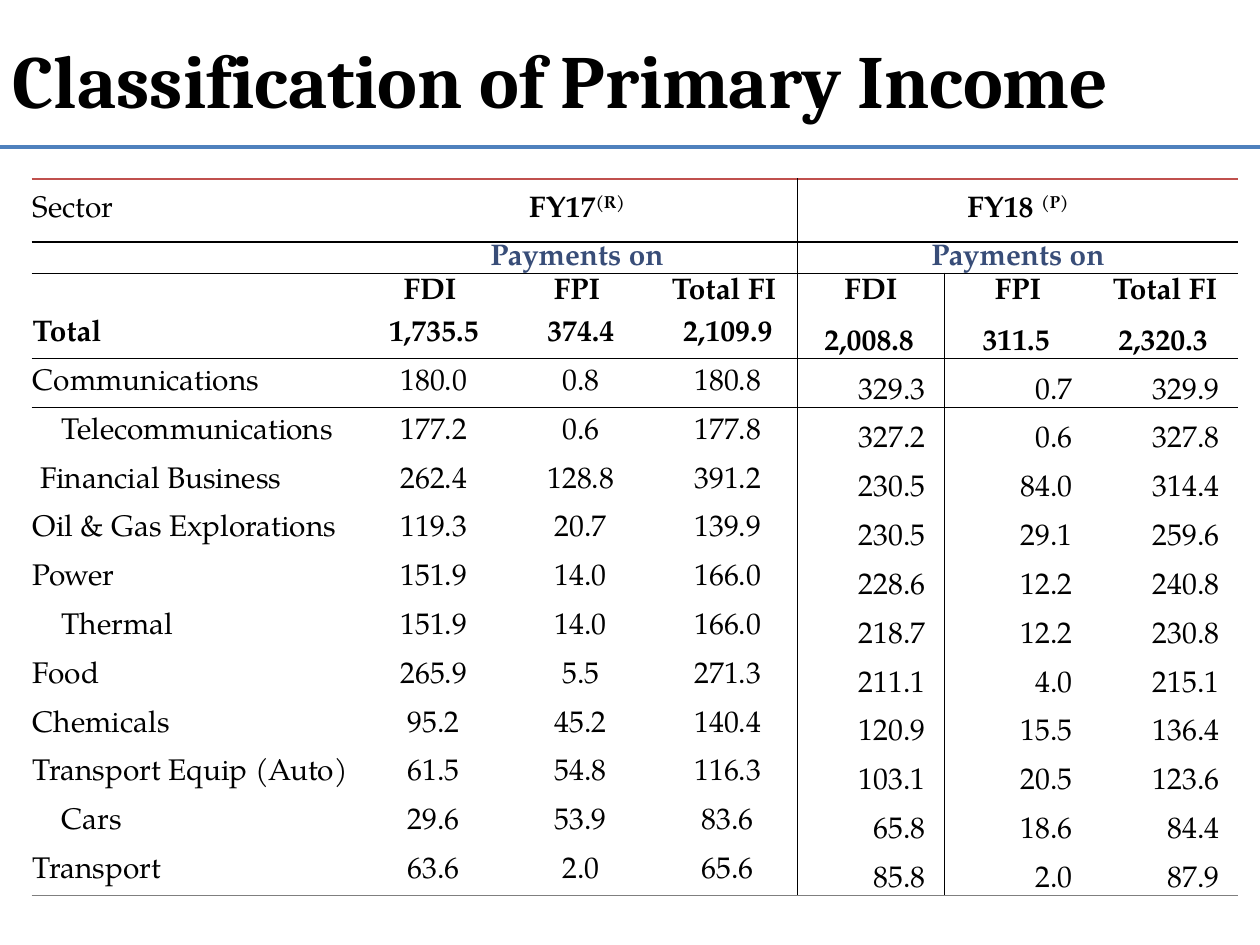
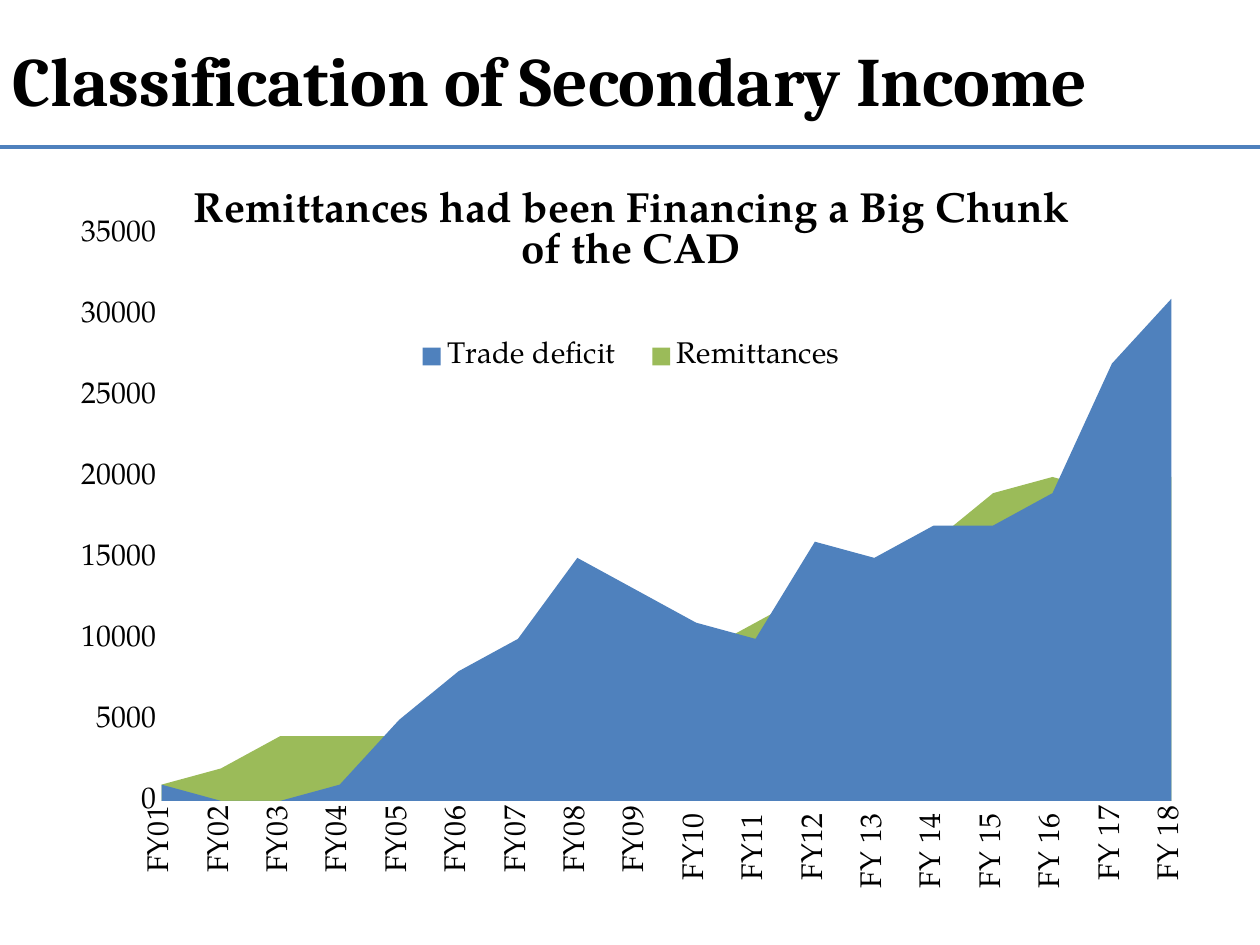
from dataclasses import dataclass
from typing import Optional

from lxml import etree
from pptx import Presentation
from pptx.chart.data import CategoryChartData
from pptx.dml.color import RGBColor
from pptx.enum import chart as ch, shapes, text
from pptx.oxml import ns
from pptx.util import Inches, Pt

COLORS = {
    "ink": "000000", "blue": "4F81BD", "green": "9BBB59", "red": "C0504D",
    "navy": "384D78", "gray": "7F7F7F", "axis": "D9D9D9",
}
HEAD, BODY, SIZE = "Cambria", "TeX Gyre Pagella", 17
LEFT, MID, RIGHT = text.PP_ALIGN.LEFT, text.PP_ALIGN.CENTER, text.PP_ALIGN.RIGHT


@dataclass
class Sector:
    name: str
    fy17: tuple
    fy18: tuple
    indent: float = 0.01


@dataclass
class Style:
    align: int = MID
    bold: bool = True
    color: str = "ink"
    left: float = 0.01
    right: float = 0.01
    low: bool = False


@dataclass
class Series:
    name: str
    color: str
    values: tuple


SECTORS = [
    Sector("Total", ("1,735.5", "374.4", "2,109.9"), ("2,008.8", "311.5", "2,320.3")),
    Sector("Communications", ("180.0", "0.8", "180.8"), ("329.3", "0.7", "329.9")),
    Sector("Telecommunications", ("177.2", "0.6", "177.8"), ("327.2", "0.6", "327.8"), 0.24),
    Sector("Financial Business", ("262.4", "128.8", "391.2"), ("230.5", "84.0", "314.4"), 0.07),
    Sector("Oil & Gas Explorations", ("119.3", "20.7", "139.9"), ("230.5", "29.1", "259.6")),
    Sector("Power", ("151.9", "14.0", "166.0"), ("228.6", "12.2", "240.8")),
    Sector("Thermal", ("151.9", "14.0", "166.0"), ("218.7", "12.2", "230.8"), 0.24),
    Sector("Food", ("265.9", "5.5", "271.3"), ("211.1", "4.0", "215.1")),
    Sector("Chemicals", ("95.2", "45.2", "140.4"), ("120.9", "15.5", "136.4")),
    Sector("Transport Equip (Auto)", ("61.5", "54.8", "116.3"), ("103.1", "20.5", "123.6")),
    Sector("Cars", ("29.6", "53.9", "83.6"), ("65.8", "18.6", "84.4"), 0.24),
    Sector("Transport", ("63.6", "2.0", "65.6"), ("85.8", "2.0", "87.9")),
]
WIDE, HIGH = 9.58, 5.69
COLS = [2.58] + [(WIDE - 2.58) / 6] * 6
TOPS = [0.5, 0.25, 0.29]
ROWS = TOPS + [(HIGH - sum(TOPS)) / len(SECTORS)] * len(SECTORS)
RULES = {0: "red", 1: "ink", 2: "ink", 4: "ink", 5: "ink", len(ROWS): "gray"}

YEARS = ([f"FY{n:02}" for n in range(1, 10)] + [f"FY{n} " for n in range(10, 13)]
         + [f"FY {n} " for n in range(13, 17)] + ["FY 17", "FY 18"])
SERIES = [
    Series("Trade deficit", "blue",
           (1000, 0, 0, 1000, 5000, 8000, 10000, 15000, 13000, 11000, 10000,
            16000, 15000, 17000, 17000, 19000, 27000, 31000)),
    Series("Remittances", "green",
           (1000, 2000, 4000, 4000, 4000, 5000, 5000, 6000, 8000, 9000, 11000,
            13000, 14000, 16000, 19000, 20000, 19000, 20000)),
]


def rgb(name: str) -> RGBColor:
    return RGBColor.from_string(COLORS[name])


def set_font(font, size: float, face: str = BODY, bold: bool = False, color: str = "ink") -> None:
    font.size, font.name, font.bold = Pt(size), face, bold
    font.color.rgb = rgb(color)


def add_slide(deck, title: str, size: float):
    """Add a slide with the shared title and the rule below it."""
    slide = deck.slides.add_slide(deck.slide_layouts[5])
    head = slide.shapes.title
    head.left, head.top, head.width, head.height = (Inches(n) for n in (0, 0, 9.67, 1.25))
    frame = head.text_frame
    frame.text = title
    frame.auto_size = text.MSO_AUTO_SIZE.NONE
    frame.vertical_anchor = text.MSO_ANCHOR.MIDDLE
    para = frame.paragraphs[0]
    para.alignment = LEFT
    set_font(para.runs[0].font, size, HEAD, True)
    rule = slide.shapes.add_connector(
        shapes.MSO_CONNECTOR.STRAIGHT, 0, Inches(1.17), Inches(10), Inches(1.17))
    rule.line.color.rgb = rgb("blue")
    rule.line.width = Pt(2.25)
    etree.SubElement(rule._element.spPr, ns.qn("a:effectLst"))
    return slide


def upright(row: int, edge: int) -> Optional[str]:
    """Colour of the vertical rule at a column edge."""
    return "ink" if edge == 4 or (edge == 5 and row >= 2) else None


def set_edges(cell, row: int, col: int) -> None:
    props = cell._tc.get_or_add_tcPr()
    edges = {"L": upright(row, col), "R": upright(row, col + 1),
             "T": RULES.get(row), "B": RULES.get(row + 1)}
    for side, color in edges.items():
        line = etree.SubElement(props, ns.qn(f"a:ln{side}"), w=str(Pt(1)))
        if color:
            fill = etree.SubElement(line, ns.qn("a:solidFill"))
            etree.SubElement(fill, ns.qn("a:srgbClr"), val=COLORS[color])
        else:
            etree.SubElement(line, ns.qn("a:noFill"))
    cell.fill.background()


def tighten(para) -> None:
    """Keep a low row from growing, even where its cell is empty."""
    para.line_spacing = Pt(SIZE)
    etree.SubElement(para._p, ns.qn("a:endParaRPr"), sz="800")


def write(cell, words: str, style: Style, raised: str = "") -> None:
    """Fill a cell; raised is set as superscript after the words."""
    cell.margin_left, cell.margin_right = Inches(style.left), Inches(style.right)
    anchor = text.MSO_ANCHOR
    cell.vertical_anchor = anchor.BOTTOM if style.low else anchor.MIDDLE
    para = cell.text_frame.paragraphs[0]
    para.text = words
    para.alignment = style.align
    if raised:
        run = para.add_run()
        run.text = raised
        run.font._element.set("baseline", "30000")
    for run in para.runs:
        set_font(run.font, SIZE, bold=style.bold, color=style.color)


def add_grid(slide) -> None:
    grid = slide.shapes.add_table(
        len(ROWS), len(COLS), Inches(0.25), Inches(1.42),
        Inches(WIDE), Inches(HIGH)).table
    grid.first_row = grid.horz_banding = False
    for col, width in zip(grid.columns, COLS):
        col.width = Inches(width)
    for r, height in enumerate(ROWS):
        grid.rows[r].height = Inches(height)
        for c in range(len(COLS)):
            cell = grid.cell(r, c)
            cell.margin_top, cell.margin_bottom = Inches(0.01), 0
            set_edges(cell, r, c)
            if r in (1, 2):
                tighten(cell.text_frame.paragraphs[0])

    write(grid.cell(0, 0), "Sector", Style(LEFT, False))
    for start, year, mark in ((1, "FY17", "(R)"), (4, "FY18 ", "(P)")):
        for r in (0, 1):
            grid.cell(r, start).merge(grid.cell(r, start + 2))
        write(grid.cell(0, start), year, Style(), mark)
        write(grid.cell(1, start), "Payments on", Style(color="navy"))
        for i, label in enumerate(("FDI", "FPI", "Total FI")):
            write(grid.cell(2, start + i), label, Style())

    for r, sector in enumerate(SECTORS, 3):
        total = sector.name == "Total"
        write(grid.cell(r, 0), sector.name, Style(LEFT, total, left=sector.indent))
        old = Style(bold=total, left=0.07)
        new = Style(MID if total else RIGHT, total, left=0.06,
                    right=0.09 if total else 0.15, low=True)
        for i in range(3):
            write(grid.cell(r, 1 + i), sector.fy17[i], old)
            write(grid.cell(r, 4 + i), sector.fy18[i], new)


def place(node, index: int, inner: bool, box: tuple) -> None:
    """Give a chart part a manual layout, as fractions of the chart."""
    for old in node.findall(ns.qn("c:layout")):
        node.remove(old)
    layout = etree.Element(ns.qn("c:layout"))
    manual = etree.SubElement(layout, ns.qn("c:manualLayout"))
    marks = [("layoutTarget", "inner")] if inner else []
    marks += [("xMode", "edge"), ("yMode", "edge"), *zip("xywh", box)]
    for tag, val in marks:
        etree.SubElement(manual, ns.qn(f"c:{tag}"), val=str(val))
    node.insert(index, layout)


def add_area(slide) -> None:
    data = CategoryChartData(number_format="0")
    data.categories = YEARS
    for item in SERIES:
        data.add_series(item.name, item.values)
    chart = slide.shapes.add_chart(
        ch.XL_CHART_TYPE.AREA, Inches(0.35), Inches(1.25),
        Inches(9.32), Inches(6.08), data).chart
    set_font(chart.font, SIZE)
    for item, drawn in zip(SERIES, chart.plots[0].series):
        drawn.format.fill.solid()
        drawn.format.fill.fore_color.rgb = rgb(item.color)

    chart.has_title = True
    frame = chart.chart_title.text_frame
    frame.text = "Remittances had been Financing a Big Chunk of the CAD"
    set_font(frame.paragraphs[0].runs[0].font, 24, bold=True)
    chart.chart_title.include_in_layout = True

    chart.has_legend = True
    chart.legend.position = ch.XL_LEGEND_POSITION.BOTTOM
    chart.legend.include_in_layout = False
    set_font(chart.legend.font, SIZE)
    place(chart.legend._element, 1, False, (0.3, 0.23, 0.4, 0.06))
    plot = chart._chartSpace.find(".//" + ns.qn("c:plotArea"))
    place(plot, 0, True, (0.1, 0.1, 0.86, 0.74))

    years, money = chart.category_axis, chart.value_axis
    for axis in (years, money):
        axis.major_tick_mark = axis.minor_tick_mark = ch.XL_TICK_MARK.NONE
        axis.has_major_gridlines = False
        set_font(axis.tick_labels.font, SIZE)
    years.format.line.color.rgb = rgb("axis")
    years.format.line.width = Pt(0.75)
    years._element.find(".//" + ns.qn("a:bodyPr")).set("rot", "-5400000")
    money.format.line.fill.background()
    money.minimum_scale, money.maximum_scale, money.major_unit = 0, 35000, 5000
    money.tick_labels.number_format = "0"
    money.tick_labels.number_format_is_linked = False


def main() -> None:
    deck = Presentation()
    deck.slide_width, deck.slide_height = Inches(10), Inches(7.5)
    add_grid(add_slide(deck, "Classification of Primary Income", 42.9))
    add_area(add_slide(deck, "Classification of Secondary Income", 39.6))
    deck.save("out.pptx")


if __name__ == "__main__":
    main()
